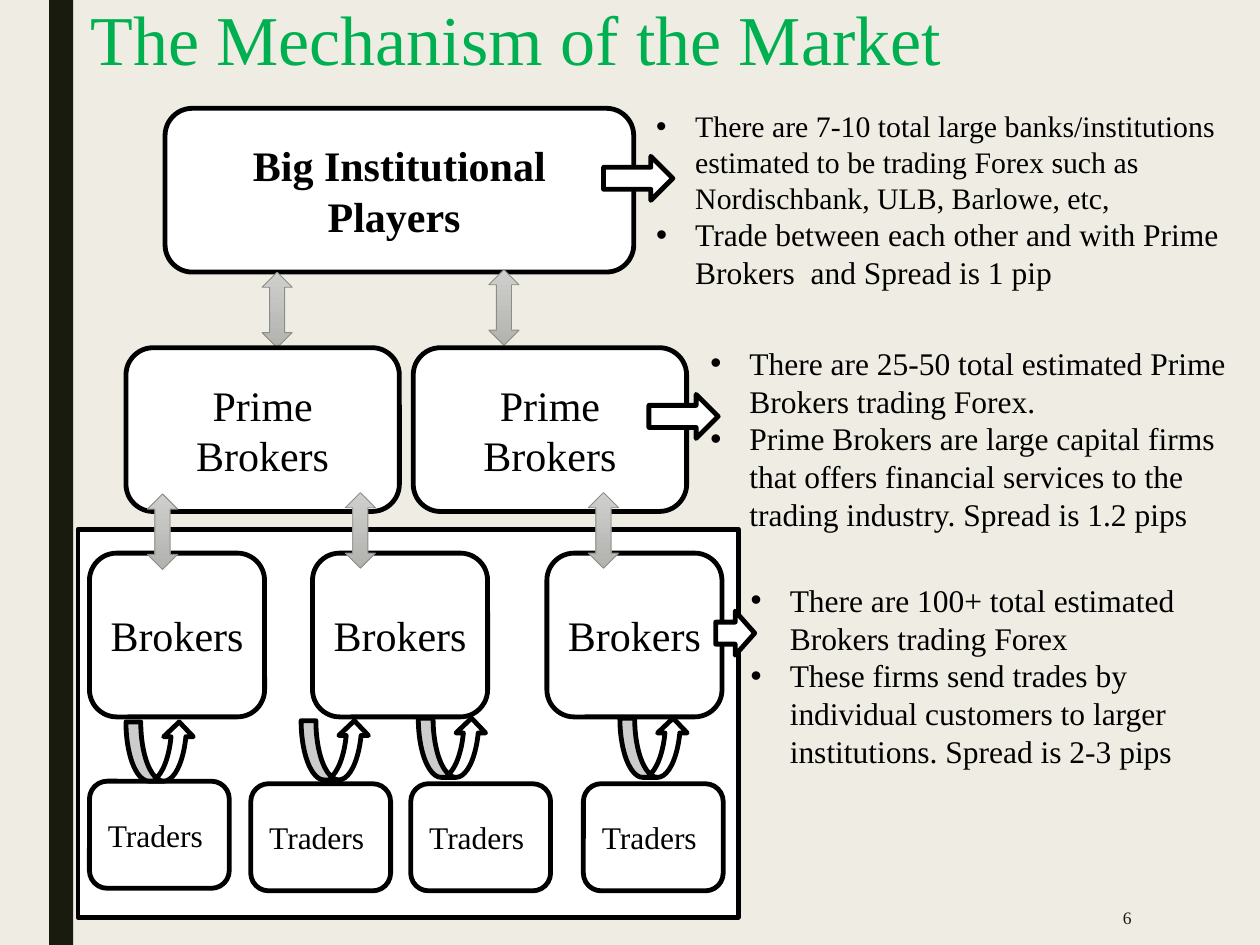
from lxml import etree
from pptx import Presentation
from pptx.dml import color
from pptx.enum import shapes, text
from pptx.oxml import ns
from pptx.util import Inches, Pt

FONT = "Times New Roman"
INK, PAPER, GREEN, DARK = "000000", "FFFFFF", "00B050", "191B0E"
GEOMETRY = shapes.MSO_SHAPE


def rgb(value):
    return color.RGBColor.from_string(value)


def format_font(font, size, ink=INK, bold=False):
    for name, value in {"name": FONT, "size": Pt(size), "bold": bold}.items():
        setattr(font, name, value)
    font.color.rgb = rgb(ink)


def add_run(paragraph, words, size, ink=INK, bold=False):
    run = paragraph.add_run()
    run.text = words
    format_font(run.font, size, ink, bold)


def add_outline(slide, geometry, box, fill=PAPER, line=INK):
    outline = slide.shapes.add_shape(geometry, *map(Inches, box))
    outline.shadow.inherit = False
    outline.fill.solid()
    outline.fill.fore_color.rgb = rgb(fill)
    if line:
        outline.line.color.rgb = rgb(line)
        outline.line.width = Pt(2.75)
    else:
        outline.line.fill.background()
    return outline


def add_party(slide, box, runs, bold=False):
    frame = add_outline(slide, GEOMETRY.ROUNDED_RECTANGLE, box).text_frame
    for name, value in {"word_wrap": True, "vertical_anchor": text.MSO_ANCHOR.MIDDLE}.items():
        setattr(frame, name, value)
    paragraph = frame.paragraphs[0]
    paragraph.alignment = text.PP_ALIGN.CENTER
    for words, size in runs:
        add_run(paragraph, words, size, bold=bold)


def add_exchange(slide, left, top):
    exchange = add_outline(slide, GEOMETRY.UP_DOWN_ARROW, (left, top, 0.24, 0.6), line="8C8D86")
    exchange.line.width = Pt(0.5)
    exchange.fill.gradient()
    exchange.fill.gradient_angle = 270
    for stop, shade in zip(exchange.fill.gradient_stops, ("CFCFCD", "B2B3AF")):
        stop.color.rgb = rgb(shade)


def add_label(slide, box, anchor=text.MSO_ANCHOR.TOP):
    frame = slide.shapes.add_textbox(*map(Inches, box)).text_frame
    frame.word_wrap = True
    frame.vertical_anchor = anchor
    return frame


def add_notes(slide, box, notes):
    frame = add_label(slide, box)
    for index, (words, size) in enumerate(notes):
        paragraph = frame.add_paragraph() if index else frame.paragraphs[0]
        add_run(paragraph, words, size)
        properties = paragraph._p.get_or_add_pPr()
        properties.set("marL", str(Inches(0.31)))
        properties.set("indent", str(-Inches(0.31)))
        etree.SubElement(properties, ns.qn("a:buFont")).set("typeface", "Arial")
        etree.SubElement(properties, ns.qn("a:buChar")).set("char", "•")


def add_heading(slide, box):
    paragraph = add_label(slide, box).paragraphs[0]
    paragraph.line_spacing = 0.89
    add_run(paragraph, "The Mechanism of the Market", 40, GREEN)


def add_page_number(slide, box):
    paragraph = add_label(slide, box, text.MSO_ANCHOR.MIDDLE).paragraphs[0]
    paragraph.alignment = text.PP_ALIGN.RIGHT
    add_run(paragraph, "6", 10, DARK)


def add_institutions(slide, box):
    left, top, width, height = box
    add_party(slide, box, [("Big Institutional Players ", 24)], bold=True)
    add_notes(slide, (left + 3.8, top - 0.05, 4.97, 1.57), [
        ("There are 7-10 total large banks/institutions estimated to be trading Forex "
         "such as Nordischbank, ULB, Barlowe, etc,", 17),
        ("Trade between each other and with Prime Brokers  and Spread is 1 pip", 18)])
    for across, down in ((0.77, 0), (2.57, -0.02)):
        add_exchange(slide, left + across, top + height + down)
    add_outline(slide, GEOMETRY.RIGHT_ARROW, (left + 3.48, top + 0.38, 0.55, 0.35))


def add_prime_brokers(slide, box):
    left, top, width, height = box
    party_width = 2.17
    for across in (0, width - party_width):
        add_party(slide, (left + across, top, party_width, height), [("Prime Brokers", 24)])
    add_notes(slide, (left + 4.54, top - 0.08, 4.37, 1.62), [
        ("There are 25-50 total estimated Prime Brokers trading Forex.", 18),
        ("Prime Brokers are large capital firms that offers financial services "
         "to the trading industry. Spread is 1.2 pips", 18)])
    add_outline(slide, GEOMETRY.RIGHT_ARROW, (left + 4.15, top + 0.37, 0.55, 0.35))


def add_retail_market(slide, box):
    left, top, width, height = box
    add_outline(slide, GEOMETRY.RECTANGLE, box)
    for across in (0.09, 1.86, 3.72):
        add_party(slide, (left + across, top + 0.19, 1.39, 1.3), [("Brokers", 24), (" ", 18)])
    for across, down in ((0.09, 2), (1.37, 2.02), (2.64, 2.02), (4.01, 2.02)):
        add_party(slide, (left + across, top + down, 1.11, 0.85), [("Traders ", 18)])
    for across, down in ((0.55, -0.28), (2.12, -0.29), (4.05, -0.29)):
        add_exchange(slide, left + across, top + down)
    for across, down in ((0.38, 1.53), (1.77, 1.52), (2.7, 1.5), (4.3, 1.5)):
        add_outline(slide, GEOMETRY.CURVED_UP_ARROW, (left + across, top + down, 0.54, 0.47))
    add_notes(slide, (left + width, top + 0.36, 4.15, 1.92), [
        ("There are 100+ total estimated Brokers trading Forex", 18),
        ("These firms send trades by individual customers to larger institutions. "
         "Spread is 2-3 pips", 18)])
    add_outline(slide, GEOMETRY.RIGHT_ARROW, (left + 5.06, top + 0.65, 0.31, 0.35))


def main():
    deck = Presentation()
    deck.slide_width, deck.slide_height = Inches(10), Inches(7.5)
    slide = deck.slides.add_slide(deck.slide_layouts[6])
    slide.background.fill.solid()
    slide.background.fill.fore_color.rgb = rgb("EFEDE3")
    add_outline(slide, GEOMETRY.RECTANGLE, (0.39, 0, 0.19, 7.5), DARK, None)
    add_heading(slide, (0.62, 0, 9.38, 1.32))
    add_page_number(slide, (7.77, 7.06, 1.31, 0.44))
    add_institutions(slide, (1.31, 0.86, 3.72, 1.3))
    add_prime_brokers(slide, (1, 2.76, 4.45, 1.3))
    add_retail_market(slide, (0.62, 4.2, 5.24, 3.08))
    deck.save("out.pptx")


if __name__ == "__main__":
    main()
